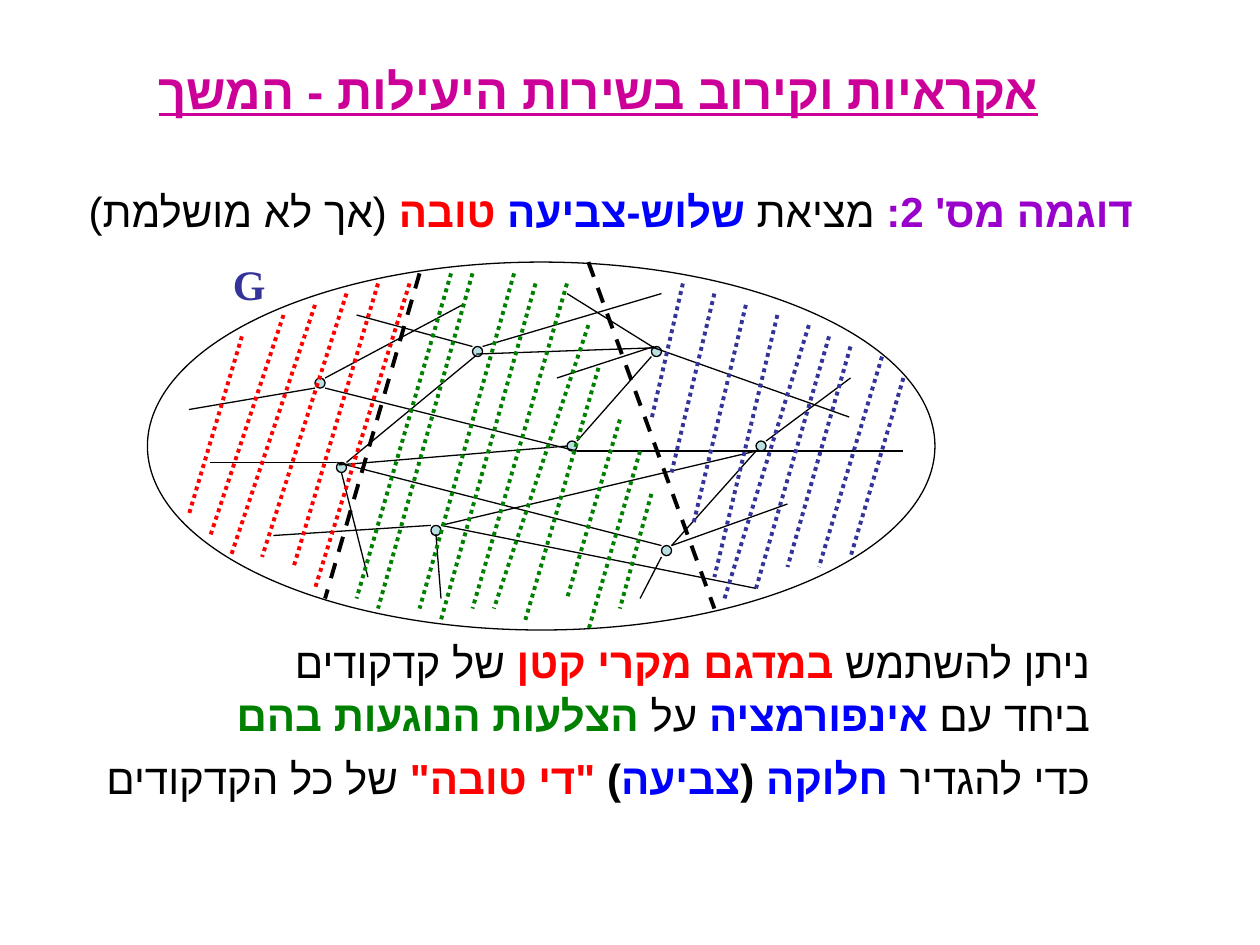
from dataclasses import dataclass

from lxml import etree
from pptx import Presentation
from pptx.dml.color import RGBColor
from pptx.enum import dml, shapes, text
from pptx.oxml import ns
from pptx.util import Inches, Pt


@dataclass(frozen=True)
class Theme:
    black: str = "000000"
    magenta: str = "CC0099"
    purple: str = "9900CC"
    blue: str = "0000FF"
    red: str = "FF0000"
    green: str = "008000"
    navy: str = "333399"
    node: str = "BBE0E3"
    sans: str = "Arial"
    serif: str = "Times New Roman"
    title_size: int = 28
    body_size: int = 24
    thin: float = 0.75
    thick: float = 2.25


THEME = Theme()
NODE_SIZE = 0.08

NODES = [(2.5, 3), (2.67, 3.67), (3.75, 2.75), (5.17, 2.75),
         (3.42, 4.17), (6, 3.5), (4.5, 3.5), (5.25, 4.33)]

EDGES = [
    (3.42, 4.17, 2.17, 4.25), (3.46, 4.24, 3.5, 4.75), (3.5, 4.17, 6, 4.67),
    (3.78, 2.82, 2.75, 3.67), (5.19, 2.76, 4.5, 2.33), (5.17, 2.83, 4.58, 3.5),
    (5.19, 2.76, 6.74, 3.31), (5.19, 2.75, 4.42, 3), (3.78, 2.81, 5.21, 2.76),
    (2.58, 3, 3.67, 2.42), (2.5, 3.08, 1.5, 3.25), (4.58, 3.58, 6, 3.58),
    (5.33, 4.33, 6.25, 4), (5.25, 4.42, 5.08, 4.75), (2.67, 3.67, 1.67, 3.67),
    (2.71, 3.75, 2.92, 4.58), (2.69, 3.69, 4.5, 3.54), (6.08, 3.5, 6.75, 3),
    (6, 3.58, 7.17, 3.58), (6, 3.58, 5.33, 4.33), (2.58, 3.08, 4.58, 3.58),
    (3.5, 4.17, 6, 3.58), (2.67, 3.67, 5.25, 4.33), (3.75, 2.75, 2.83, 2.5),
    (3.83, 2.75, 5.25, 2.33),
]

BOUNDARIES = [(4.67, 2.08, 5.67, 4.83), (3.33, 2.17, 2.58, 4.75)]

HATCHING = {
    THEME.navy: [
        (7.17, 3, 6.75, 4.42), (7, 2.83, 6.5, 4.5), (6.75, 2.75, 6.25, 4.5),
        (6.58, 2.67, 6, 4.67), (6.42, 2.58, 5.75, 4.75), (6.17, 2.5, 5.67, 4.58),
        (5.92, 2.42, 5.5, 4.17), (5.67, 2.33, 5.33, 3.75), (5.42, 2.25, 5.17, 3.33),
    ],
    THEME.green: [
        (5.08, 3.58, 4.67, 5), (5.17, 3.92, 4.92, 4.83), (4.08, 2.17, 3.33, 4.83),
        (3.75, 2.17, 3, 4.83), (3.58, 2.17, 2.83, 4.75), (4.25, 2.25, 3.5, 4.92),
        (4.5, 2.25, 3.75, 4.83), (4.67, 2.58, 3.92, 4.83), (4.75, 2.92, 4.17, 4.92),
        (4.92, 3.33, 4.5, 4.75),
    ],
    THEME.red: [
        (3.25, 2.25, 2.5, 4.67), (3, 2.25, 2.33, 4.5), (2.75, 2.33, 2.08, 4.42),
        (1.92, 2.67, 1.5, 4.08), (2.25, 2.5, 1.67, 4.25), (2.5, 2.42, 1.83, 4.42),
    ],
}

HEBREW_LINES = [
    ((0.17, 1.42, 8.92, 0.5), [
        ("דוגמה מס' 2:", THEME.purple, True), (" מציאת ", THEME.black, False),
        ("שלוש-צביעה ", THEME.blue, True), ("טובה ", THEME.red, True),
        ("(אך לא מושלמת)", THEME.black, False)]),
    ((1.58, 5, 7.17, 0.5), [
        ("ניתן להשתמש ", THEME.black, False), ("במדגם מקרי קטן", THEME.red, True),
        (" של קדקודים", THEME.black, False)]),
    ((0.5, 5.42, 8.25, 0.5), [
        ("ביחד עם ", THEME.black, False), ("אינפורמציה ", THEME.blue, True),
        ("על ", THEME.black, False), ("הצלעות הנוגעות בהם", THEME.green, True)]),
    ((0.58, 5.92, 8.17, 0.5), [
        ("כדי להגדיר ", THEME.black, False), ("חלוקה ", THEME.blue, True),
        ("(", THEME.black, True), ("צביעה", THEME.blue, True),
        (") ", THEME.black, True), ("\"די טובה\"", THEME.red, True),
        (" של כל הקדקודים", THEME.black, False)]),
]


def add_text(slide, box, runs, font=THEME.serif, size=THEME.body_size,
             align=text.PP_ALIGN.LEFT, rtl=False, underline=False):
    shape = slide.shapes.add_textbox(*map(Inches, box))
    frame = shape.text_frame
    frame.word_wrap = True
    frame.vertical_anchor = text.MSO_ANCHOR.MIDDLE if underline else text.MSO_ANCHOR.TOP
    paragraph = frame.paragraphs[0]
    paragraph.alignment = align
    if rtl:
        paragraph._p.get_or_add_pPr().set("rtl", "1")
    for words, color, bold in runs:
        run = paragraph.add_run()
        run.text = words
        run.font.name = font
        run.font.size = Pt(size)
        run.font.bold = bold
        run.font.underline = underline
        run.font.color.rgb = RGBColor.from_string(color)
        complex_font = etree.SubElement(run._r.get_or_add_rPr(), ns.qn("a:cs"))
        complex_font.set("typeface", THEME.sans)


def add_ellipse(slide, box, fill=None):
    shape = slide.shapes.add_shape(shapes.MSO_SHAPE.OVAL, *map(Inches, box))
    shape.shadow.inherit = False
    if fill:
        shape.fill.solid()
        shape.fill.fore_color.rgb = RGBColor.from_string(fill)
    else:
        shape.fill.background()
    shape.line.color.rgb = RGBColor.from_string(THEME.black)
    shape.line.width = Pt(THEME.thin)


def add_lines(slide, segments, color=THEME.black, width=THEME.thin, dash=None):
    for segment in segments:
        connector = slide.shapes.add_connector(
            shapes.MSO_CONNECTOR.STRAIGHT, *map(Inches, segment))
        connector.line.color.rgb = RGBColor.from_string(color)
        connector.line.width = Pt(width)
        if dash:
            connector.line.dash_style = dash
        etree.SubElement(connector._element.spPr, ns.qn("a:effectLst"))


def add_graph(slide):
    add_ellipse(slide, (1.17, 2.08, 6.25, 2.92))
    add_text(slide, (1.75, 2, 0.58, 0.5), [("G", THEME.navy, True)])
    for left, top in NODES:
        add_ellipse(slide, (left, top, NODE_SIZE, NODE_SIZE), THEME.node)
    add_lines(slide, EDGES)
    add_lines(slide, BOUNDARIES, width=THEME.thick, dash=dml.MSO_LINE.DASH)
    for color, segments in HATCHING.items():
        add_lines(slide, segments, color, THEME.thick, dml.MSO_LINE.ROUND_DOT)


def main():
    presentation = Presentation()
    presentation.slide_width = Inches(10)
    presentation.slide_height = Inches(7.5)
    slide = presentation.slides.add_slide(presentation.slide_layouts[6])
    add_text(slide, (0, 0.25, 9.5, 0.92),
             [("אקראיות וקירוב בשירות היעילות - המשך", THEME.magenta, True)],
             THEME.sans, THEME.title_size, text.PP_ALIGN.CENTER, underline=True)
    add_graph(slide)
    for box, runs in HEBREW_LINES:
        add_text(slide, box, runs, align=text.PP_ALIGN.RIGHT, rtl=True)
    presentation.save("out.pptx")


if __name__ == "__main__":
    main()
